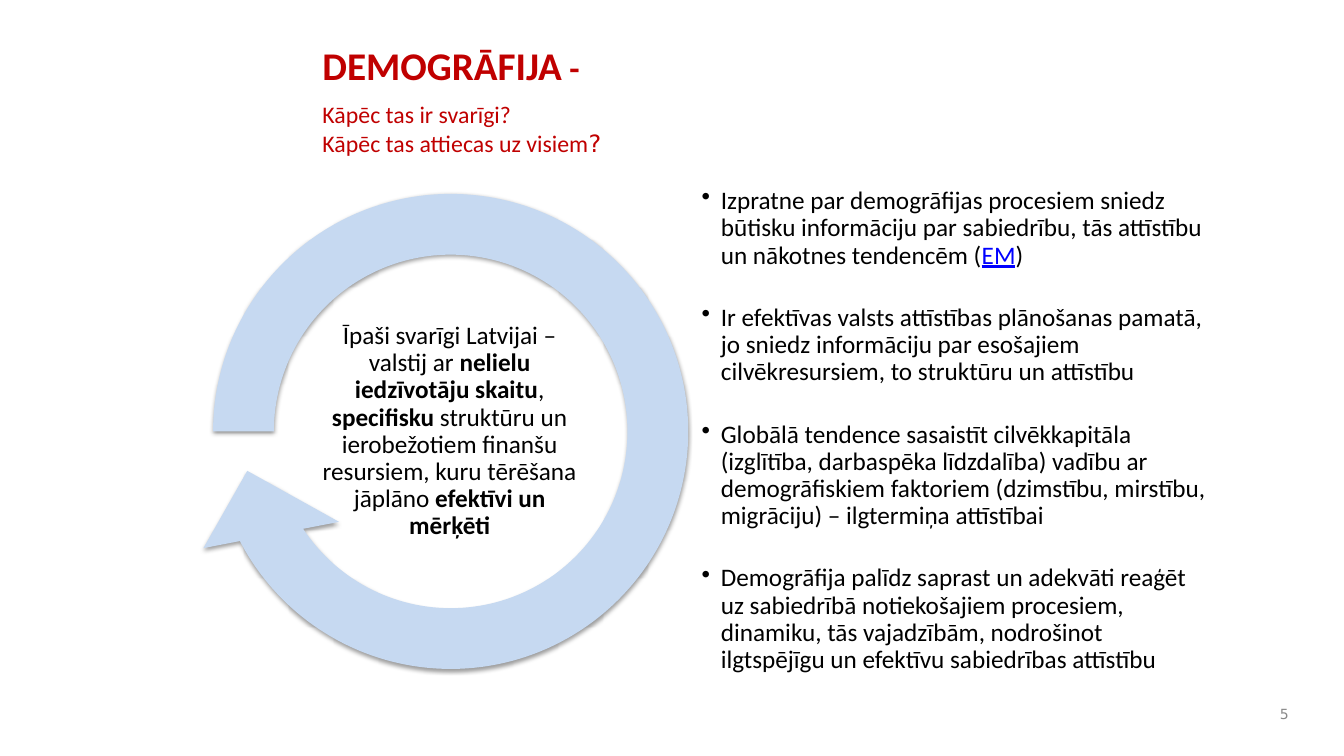
from lxml import etree
from pptx import Presentation
from pptx.dml.color import RGBColor
from pptx.enum.shapes import MSO_SHAPE
from pptx.enum.text import MSO_ANCHOR, PP_ALIGN
from pptx.oxml import parse_xml
from pptx.oxml.ns import nsdecls, qn
from pptx.util import Inches, Pt

CIRCULAR_ARROW = MSO_SHAPE.CIRCULAR_ARROW
TOP, MIDDLE = MSO_ANCHOR.TOP, MSO_ANCHOR.MIDDLE
LEFT, CENTER, RIGHT = PP_ALIGN.LEFT, PP_ALIGN.CENTER, PP_ALIGN.RIGHT

COLORS = {
    "heading": "C00000",
    "body": "000000",
    "link": "0000FF",
    "arrow": "C6D9F1",
    "number": "898989",
}
BODY_FONT, SYSTEM_FONT = "Calibri", "DejaVu Sans"

# Each paragraph is a list of (text, format overrides).
TITLE = [[("DEMOGRĀFIJA", {}), (" -", {"size": 24})]]
QUESTIONS = [
    [("Kāpēc tas ir svarīgi?", {})],
    [("Kāpēc tas attiecas uz visiem", {}), ("?", {"font": SYSTEM_FONT})],
]
CORE_MESSAGE = [[
    ("Īpaši svarīgi Latvijai – valstij ar ", {}),
    ("nelielu iedzīvotāju skaitu", {"bold": True}),
    (", ", {}),
    ("specifisku", {"bold": True}),
    (" struktūru un ierobežotiem finanšu resursiem, kuru tērēšana jāplāno ", {}),
    ("efektīvi un mērķēti", {"bold": True}),
]]
REASONS = [
    [
        ("Izpratne par demogrāfijas procesiem sniedz būtisku informāciju par "
         "sabiedrību, tās attīstību un nākotnes tendencēm (", {}),
        ("EM", {"color": "link", "underline": True}),
        (")", {}),
    ],
    [("Ir efektīvas valsts attīstības plānošanas pamatā, jo sniedz informāciju "
      "par esošajiem cilvēkresursiem, to struktūru un attīstību", {})],
    [("Globālā tendence sasaistīt cilvēkkapitāla (izglītība, darbaspēka "
      "līdzdalība) vadību ar demogrāfiskiem faktoriem (dzimstību, mirstību, "
      "migrāciju) – ilgtermiņa attīstībai", {})],
    [("Demogrāfija palīdz saprast un adekvāti reaģēt uz sabiedrībā notiekošajiem "
      "procesiem, dinamiku, tās vajadzībām, nodrošinot ilgtspējīgu un efektīvu "
      "sabiedrības attīstību", {})],
]


class SlideBuilder:
    def __init__(self, slide):
        self.slide = slide

    def text(self, place, paragraphs, size=18, color="body", bold=False,
             font=BODY_FONT, align=LEFT, anchor=TOP, inset=(0.1, 0.05),
             line_spacing=1.0, gap=0, bullet=False):
        """Add a text box; gap is the space in points between paragraphs."""
        box = self.slide.shapes.add_textbox(*map(Inches, place))
        frame = box.text_frame
        frame.word_wrap = True
        frame.vertical_anchor = anchor
        frame.margin_left = frame.margin_right = Inches(inset[0])
        frame.margin_top = frame.margin_bottom = Inches(inset[1])
        base = {"size": size, "color": color, "bold": bold, "font": font,
                "underline": False}
        for index, spans in enumerate(paragraphs):
            para = frame.add_paragraph() if index else frame.paragraphs[0]
            para.alignment = align
            para.line_spacing = line_spacing
            para.space_before = Pt(gap if index else 0)
            if bullet:
                self.bullet(para)
            for text, overrides in spans:
                self.span(para, text, **{**base, **overrides})

    def span(self, para, text, size, color, bold, font, underline):
        span = para.add_run()
        span.text = text
        span.font.name = font
        span.font.size = Pt(size)
        span.font.bold = bold
        span.font.underline = underline
        span.font.color.rgb = RGBColor.from_string(COLORS[color])

    def bullet(self, para, indent=0.19):
        properties = para._p.get_or_add_pPr()
        properties.set("marL", str(Inches(indent)))
        properties.set("indent", str(-Inches(indent)))
        etree.SubElement(properties, qn("a:buChar")).set("char", "•")

    def cycle_arrow(self, place, adjustments):
        arrow = self.slide.shapes.add_shape(CIRCULAR_ARROW, *map(Inches, place))
        for index, value in enumerate(adjustments):
            arrow.adjustments[index] = value
        arrow.fill.solid()
        arrow.fill.fore_color.rgb = RGBColor.from_string(COLORS["arrow"])
        arrow.line.fill.background()
        self.shadow(arrow)

    def shadow(self, shape, blur=3.1, distance=1.6, opacity=38):
        """Give the shape a soft shadow straight below it."""
        shape.shadow.inherit = False
        effects = shape._element.spPr.find(qn("a:effectLst"))
        effects.append(parse_xml(
            f'<a:outerShdw {nsdecls("a")} blurRad="{Pt(blur)}" '
            f'dist="{Pt(distance)}" dir="5400000" rotWithShape="0">'
            f'<a:srgbClr val="000000"><a:alpha val="{opacity * 1000}"/>'
            f'</a:srgbClr></a:outerShdw>'))


def main():
    deck = Presentation()
    deck.slide_width, deck.slide_height = Inches(13.33), Inches(7.5)
    page = SlideBuilder(deck.slides.add_slide(deck.slide_layouts[6]))

    page.text((12.44, 6.92, 0.44, 0.33), [[("5", {})]], size=10, color="number",
              font=SYSTEM_FONT, align=RIGHT, anchor=MIDDLE)
    page.cycle_arrow((1.73, 1.54, 5.48, 5.48), (0.11, 11.42, 90, 108, 0.125))
    page.text((6.95, 3.18, 5.06, 2.19), REASONS, anchor=MIDDLE,
              inset=(0.01, 0.01), line_spacing=0.9, gap=25, bullet=True)
    page.text((3.16, 3.17, 2.6, 2.22), CORE_MESSAGE, align=CENTER, anchor=MIDDLE,
              inset=(0.01, 0.01), line_spacing=0.9)
    page.text((3.1, 0.94, 7.01, 0.67), QUESTIONS, size=17, color="heading")
    page.text((3.1, 0.36, 6.67, 0.59), TITLE, size=28, color="heading", bold=True)

    deck.save("out.pptx")


if __name__ == "__main__":
    main()
